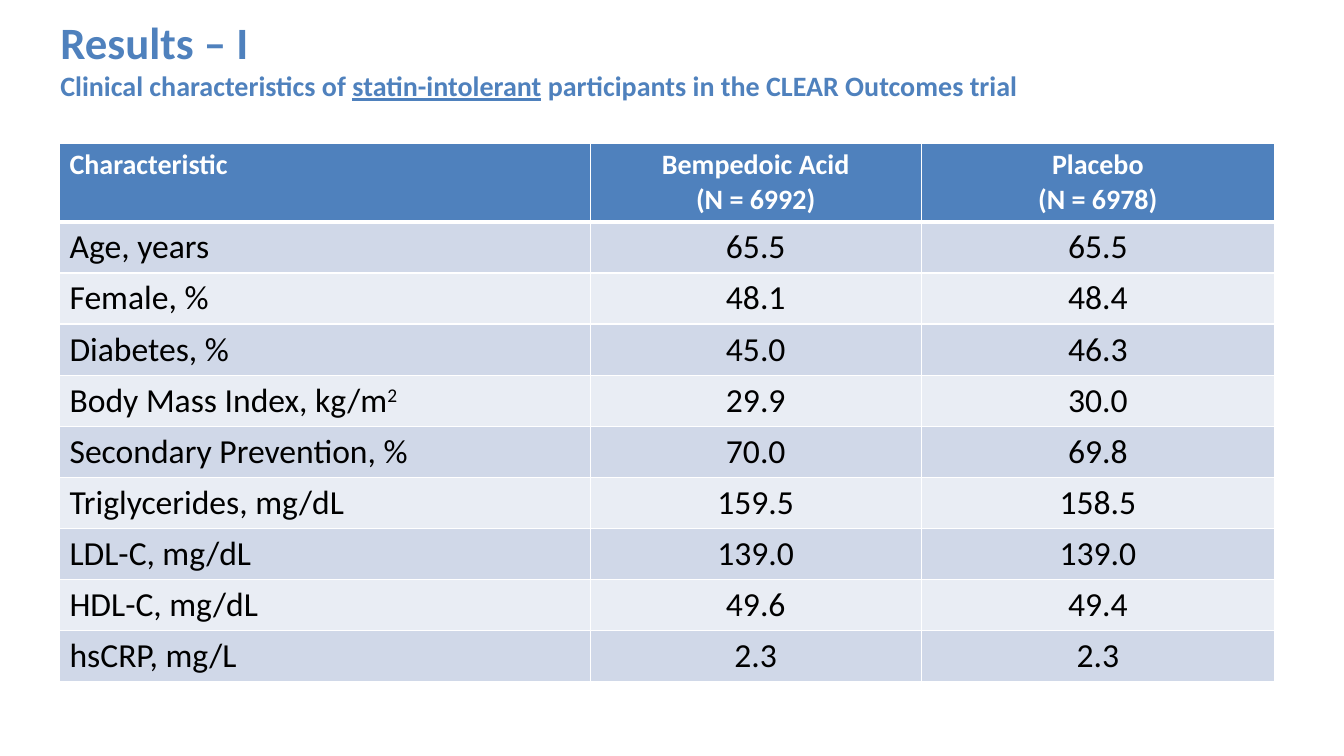
import pptx
import pptx.util
import pptx.dml.color
import pptx.enum.text
import pptx.oxml
import pptx.oxml.ns

COLORS = {"blue": "4F81BD", "white": "FFFFFF", "black": "000000",
          "dark": "D0D8E8", "light": "E9EDF4"}
FONT = "Calibri"
HEAD = ("Characteristic", "Bempedoic Acid\n(N = 6992)", "Placebo\n(N = 6978)")
ROWS = (
    ("Age, years", "65.5", "65.5"),
    ("Female, %", "48.1", "48.4"),
    ("Diabetes, %", "45.0", "46.3"),
    ("Body Mass Index, kg/m^2", "29.9", "30.0"),
    ("Secondary Prevention, %", "70.0", "69.8"),
    ("Triglycerides, mg/dL", "159.5", "158.5"),
    ("LDL-C, mg/dL", "139.0", "139.0"),
    ("HDL-C, mg/dL", "49.6", "49.4"),
    ("hsCRP, mg/L", "2.3", "2.3"),
)
SHARES = (5.26, 3.28, 3.5)
HEAD_HIGH = 0.77


def color(name):
    """Return the named color."""
    return pptx.dml.color.RGBColor.from_string(COLORS[name])


def style(run, size, tint, bold):
    """Format one run of text."""
    run.font.name = FONT
    run.font.size = pptx.util.Pt(size)
    run.font.bold = bold
    run.font.color.rgb = color(tint)


def edge(cell, top, bottom):
    """Draw white borders around a cell, with widths in points."""
    props = cell._tc.get_or_add_tcPr()
    sides = {"lnL": 1, "lnR": 1, "lnT": top, "lnB": bottom}
    for place, (side, width) in enumerate(sides.items()):
        props.insert(place, pptx.oxml.parse_xml(
            f'<a:{side} {pptx.oxml.ns.nsdecls("a")} w="{width * 12700}">'
            f'<a:solidFill><a:srgbClr val="{COLORS["white"]}"/></a:solidFill>'
            f'</a:{side}>'))


def fill_cell(cell, text, row, col):
    """Write and format one cell by its place in the table."""
    head = row == 0
    main, _, power = text.partition("^")
    cell.text_frame.text = main
    if power:
        raised = cell.text_frame.paragraphs[0].add_run()
        raised.text = power
        raised._r.get_or_add_rPr().set("baseline", "30000")
    for para in cell.text_frame.paragraphs:
        if col:
            para.alignment = pptx.enum.text.PP_ALIGN.CENTER
        for run in para.runs:
            style(run, 20 if head else 24, "white" if head else "black", head)
    cell.fill.solid()
    cell.fill.fore_color.rgb = color(
        "blue" if head else "dark" if row % 2 else "light")
    edge(cell, 3 if row == 1 else 1, 3 if head else 1)


def add_title(slide, left, top, width, height):
    """Place the title and its subtitle in the given box."""
    box = slide.shapes.add_textbox(
        *map(pptx.util.Inches, (left, top, width, height)))
    frame = box.text_frame
    frame.word_wrap = True
    frame.text = "Results – I"
    style(frame.paragraphs[0].runs[0], 32, "blue", True)
    para = frame.add_paragraph()
    for text, under in (("Clinical characteristics of ", False),
                        ("statin-intolerant", True),
                        (" participants in the CLEAR Outcomes trial", False)):
        run = para.add_run()
        run.text = text
        style(run, 20, "blue", True)
        run.font.underline = under


def add_data(slide, left, top, width, height):
    """Place the table of characteristics in the given box."""
    data = (HEAD, *ROWS)
    table = slide.shapes.add_table(
        len(data), len(HEAD),
        *map(pptx.util.Inches, (left, top, width, height))).table
    for column, share in zip(table.columns, SHARES):
        column.width = pptx.util.Inches(width * share / sum(SHARES))
    step = (height - HEAD_HIGH) / len(ROWS)
    for row, texts in enumerate(data):
        table.rows[row].height = pptx.util.Inches(step if row else HEAD_HIGH)
        for col, text in enumerate(texts):
            fill_cell(table.cell(row, col), text, row, col)


def main():
    """Build and save the slide."""
    deck = pptx.Presentation()
    deck.slide_width = pptx.util.Inches(13.33)
    deck.slide_height = pptx.util.Inches(7.5)
    slide = deck.slides.add_slide(deck.slide_layouts[6])
    add_data(slide, 0.59, 1.42, 12.05, 5.32)
    add_title(slide, 0.5, 0.1, 12.19, 0.98)
    deck.save("out.pptx")


if __name__ == "__main__":
    main()
